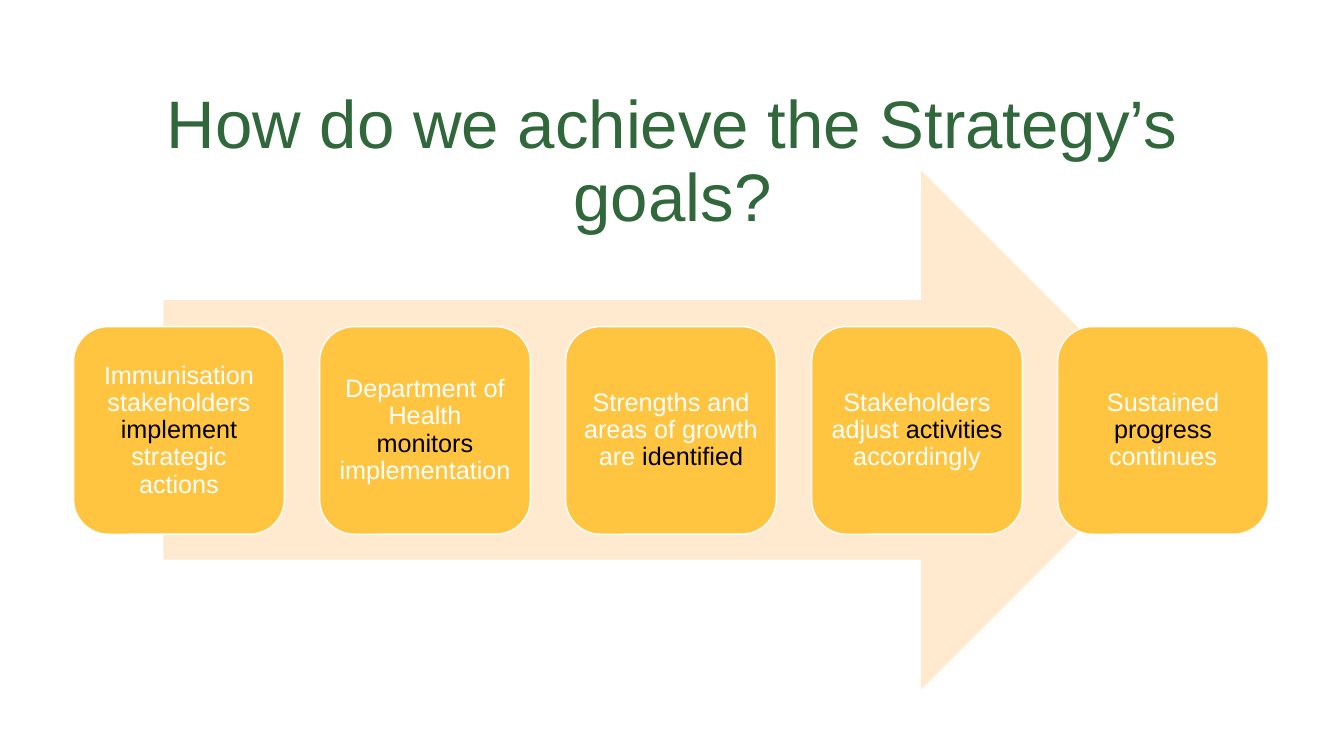
from pptx import Presentation
from pptx.dml.color import RGBColor
from pptx.enum.shapes import MSO_SHAPE
from pptx.enum.text import MSO_ANCHOR, PP_ALIGN
from pptx.util import Inches, Pt

GREEN = RGBColor(0x30, 0x68, 0x3B)
CREAM = RGBColor(0xFF, 0xEA, 0xCF)
AMBER = RGBColor(0xFF, 0xC4, 0x40)
WHITE = RGBColor(0xFF, 0xFF, 0xFF)
BLACK = RGBColor(0x00, 0x00, 0x00)

TITLE = "How do we achieve the Strategy’s goals?"
STEPS = [
    ("Immunisation stakeholders ", "implement", " strategic actions"),
    ("Department of Health ", "monitors ", "implementation"),
    ("Strengths and areas of growth are ", "identified"),
    ("Stakeholders adjust ", "activities", " accordingly"),
    ("Sustained ", "progress", " continues"),
]
STEP_LEFT, STEP_TOP, STEP_PITCH = 0.73, 3.24, 2.44
STEP_WIDTH, STEP_HEIGHT = 2.09, 2.06
STEP_INSET = Inches(0.07)

FRAME_FORMAT = {"word_wrap": True, "vertical_anchor": MSO_ANCHOR.MIDDLE}
STEP_FRAME_FORMAT = FRAME_FORMAT | {
    "margin_left": STEP_INSET,
    "margin_top": STEP_INSET,
    "margin_right": STEP_INSET,
    "margin_bottom": STEP_INSET,
}
PARAGRAPH_FORMAT = {"alignment": PP_ALIGN.CENTER, "line_spacing": 0.9}


def apply_format(target, values):
    """Set each named attribute on the target."""
    for name, value in values.items():
        setattr(target, name, value)


def write_phrases(frame, phrases, size, frame_format):
    """Write coloured phrases as one centred paragraph."""
    apply_format(frame, frame_format)
    paragraph = frame.paragraphs[0]
    apply_format(paragraph, PARAGRAPH_FORMAT)
    for wording, color in phrases:
        phrase = paragraph.add_run()
        phrase.text = wording
        apply_format(phrase.font, {"name": "Arial", "size": Pt(size)})
        phrase.font.color.rgb = color


def add_title(slide):
    """Add the question that heads the slide."""
    title = slide.shapes.add_textbox(
        Inches(0.92), Inches(0.66), Inches(11.5), Inches(1.92)
    )
    write_phrases(title.text_frame, [(TITLE, GREEN)], 48, FRAME_FORMAT)


def add_filled_shape(slide, preset, left, top, width, height, fill):
    """Add a flat preset shape without an outline."""
    shape = slide.shapes.add_shape(
        preset, Inches(left), Inches(top), Inches(width), Inches(height)
    )
    shape.shadow.inherit = False
    shape.fill.solid()
    shape.fill.fore_color.rgb = fill
    shape.line.fill.background()
    return shape


def add_step(slide, position, wording):
    """Add one step card with its key word in black."""
    card = add_filled_shape(
        slide, MSO_SHAPE.ROUNDED_RECTANGLE, STEP_LEFT + position * STEP_PITCH,
        STEP_TOP, STEP_WIDTH, STEP_HEIGHT, AMBER,
    )
    card.line.color.rgb = WHITE
    card.line.width = Pt(1)
    phrases = zip(wording, (WHITE, BLACK, WHITE))
    write_phrases(card.text_frame, phrases, 18, STEP_FRAME_FORMAT)


def main():
    """Build the slide and save it."""
    deck = Presentation()
    apply_format(
        deck, {"slide_width": Inches(13.33), "slide_height": Inches(7.5)}
    )
    slide = deck.slides.add_slide(deck.slide_layouts[6])
    add_title(slide)
    add_filled_shape(
        slide, MSO_SHAPE.RIGHT_ARROW, 1.62, 1.69, 10.09, 5.15, CREAM
    )
    for position, wording in enumerate(STEPS):
        add_step(slide, position, wording)
    deck.save("out.pptx")


if __name__ == "__main__":
    main()
